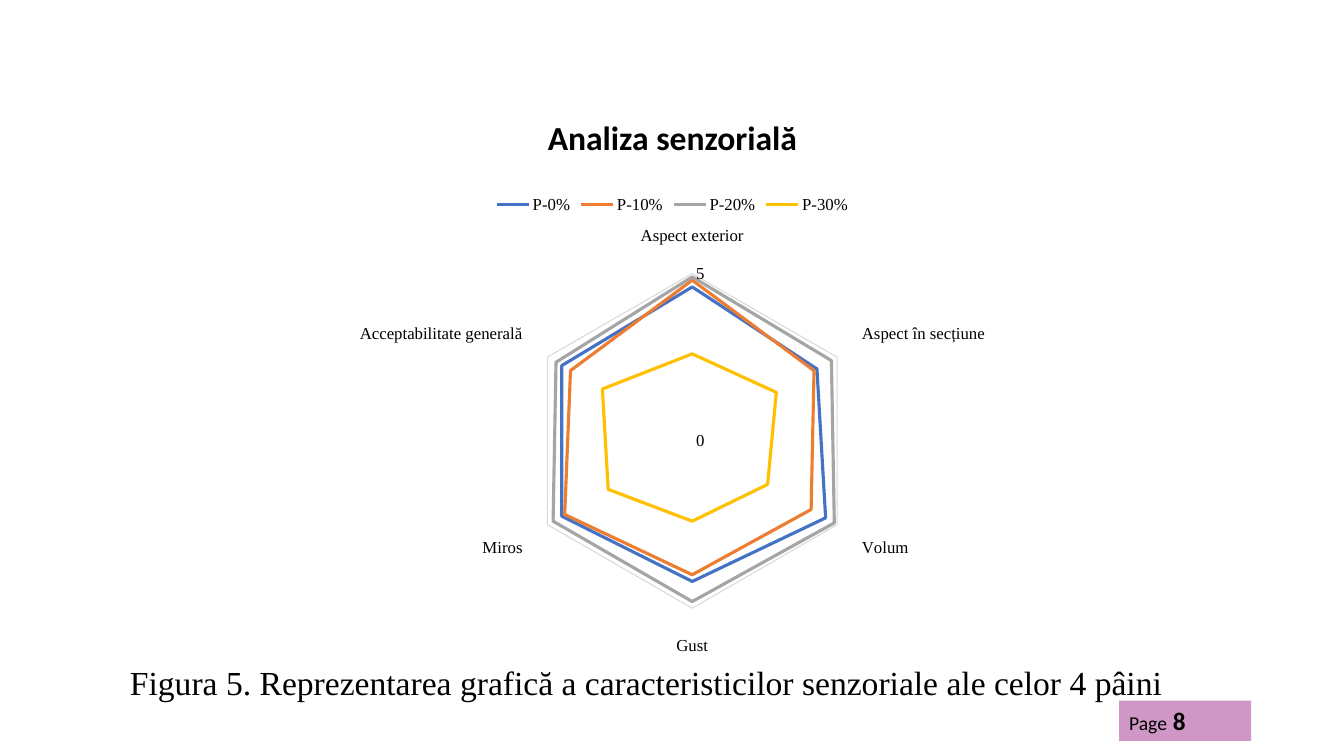
"""Build a slide with a radar chart of the sensory analysis of four breads."""
from lxml.etree import SubElement
from pptx import Presentation
from pptx.chart.data import CategoryChartData
from pptx.dml.color import RGBColor
from pptx.enum.chart import XL_CHART_TYPE, XL_LEGEND_POSITION, XL_MARKER_STYLE, XL_TICK_MARK
from pptx.enum.shapes import MSO_SHAPE
from pptx.enum.text import MSO_ANCHOR, PP_ALIGN
from pptx.oxml.ns import qn
from pptx.util import Pt

EMU_PER_PX = 9144
SANS = "Calibri"
SERIF = "Times New Roman"
BLACK = "000000"
GREY = "D9D9D9"

CATEGORIES = ["Aspect exterior", "Aspect în secțiune", "Volum", "Gust", "Miros",
              "Acceptabilitate generală"]
BREADS = [
    ("P-0%", "4472C4", [4.6, 4.3, 4.6, 4.2, 4.5, 4.5]),
    ("P-10%", "ED7D31", [4.8, 4.2, 4.1, 4, 4.4, 4.2]),
    ("P-20%", "A5A5A5", [4.9, 4.8, 4.9, 4.8, 4.8, 4.7]),
    ("P-30%", "FFC000", [2.6, 2.9, 2.6, 2.4, 2.9, 3.1]),
]


def px(*lengths):
    """Turn whole pixels into a list of EMU lengths."""
    return [length * EMU_PER_PX for length in lengths]


def color(hex_string):
    """Return the colour of a hex string."""
    return RGBColor.from_string(hex_string)


def set_font(font, size, name, bold=False):
    """Format a font in black."""
    font.size = Pt(size)
    font.name = name
    font.bold = bold
    font.color.rgb = color(BLACK)


def set_line(line, hex_string, width):
    """Give a line its colour and width in points."""
    line.color.rgb = color(hex_string)
    line.width = Pt(width)


def set_title(slide, text, left, top, width, height):
    """Place and format the slide title."""
    title = slide.shapes.title
    title.left, title.top, title.width, title.height = px(left, top, width, height)
    frame = title.text_frame
    frame.text = text
    frame.vertical_anchor = MSO_ANCHOR.MIDDLE
    para = frame.paragraphs[0]
    para.alignment = PP_ALIGN.CENTER
    para.line_spacing = 0.9
    set_font(para.runs[0].font, 24, SANS, bold=True)


def add_caption(slide, text, left, top, width, height):
    """Add the figure caption."""
    box = slide.shapes.add_textbox(*px(left, top, width, height))
    box.text_frame.word_wrap = True
    box.text_frame.text = text
    set_font(box.text_frame.paragraphs[0].runs[0].font, 24, SERIF)


def add_page_tag(slide, number, left, top, width, height):
    """Add the half-transparent page number tag."""
    tag = slide.shapes.add_shape(MSO_SHAPE.RECTANGLE, *px(left, top, width, height))
    tag.shadow.inherit = False
    tag.line.fill.background()
    tag.fill.solid()
    tag.fill.fore_color.rgb = color("9F318D")
    fill_color = next(tag.fill._xPr.iter(qn("a:srgbClr")))
    SubElement(fill_color, qn("a:alpha")).set("val", "50000")
    para = tag.text_frame.paragraphs[0]
    para.alignment = PP_ALIGN.LEFT
    for text, size, bold in (("Page", 14, False), (f" {number}", 18, True)):
        span = para.add_run()
        span.text = text
        set_font(span.font, size, SANS, bold)


def format_axes(chart):
    """Format the category and value axes."""
    for axis in (chart.category_axis, chart.value_axis):
        axis.major_tick_mark = XL_TICK_MARK.NONE
        axis.minor_tick_mark = XL_TICK_MARK.NONE
        set_font(axis.tick_labels.font, 12, SERIF)
    chart.category_axis.has_major_gridlines = False
    set_line(chart.category_axis.format.line, GREY, 0.75)
    scale = chart.value_axis
    scale.minimum_scale, scale.maximum_scale, scale.major_unit = 0, 5, 5
    scale.has_major_gridlines = True
    set_line(scale.major_gridlines.format.line, GREY, 0.75)
    scale.format.line.fill.background()
    scale.tick_labels.number_format = "General"
    scale.tick_labels.number_format_is_linked = False


def add_radar(slide, left, top, width, height):
    """Add the radar chart of the breads."""
    data = CategoryChartData()
    data.categories = CATEGORIES
    for name, _, values in BREADS:
        data.add_series(name, values)
    chart = slide.shapes.add_chart(
        XL_CHART_TYPE.RADAR, *px(left, top, width, height), data).chart
    chart.has_title = False
    set_font(chart.font, 10, SANS)
    format_axes(chart)
    chart.has_legend = True
    chart.legend.position = XL_LEGEND_POSITION.TOP
    chart.legend.include_in_layout = False
    set_font(chart.legend.font, 12, SERIF)
    for series, (_, line_color, _) in zip(chart.plots[0].series, BREADS):
        set_line(series.format.line, line_color, 2.25)
        series.marker.style = XL_MARKER_STYLE.NONE


def main():
    """Build and save the deck."""
    deck = Presentation()
    deck.slide_width, deck.slide_height = px(1333, 750)
    slide = deck.slides.add_slide(deck.slide_layouts[5])
    set_title(slide, "Analiza senzorială", 92, 91, 1150, 94)
    add_page_tag(slide, 8, 1110, 695, 131, 40)
    add_radar(slide, 92, 183, 1150, 476)
    add_caption(slide, "Figura 5. Reprezentarea grafică a caracteristicilor senzoriale "
                       "ale celor 4 pâini", 119, 652, 1122, 50)
    deck.save("out.pptx")


if __name__ == "__main__":
    main()
